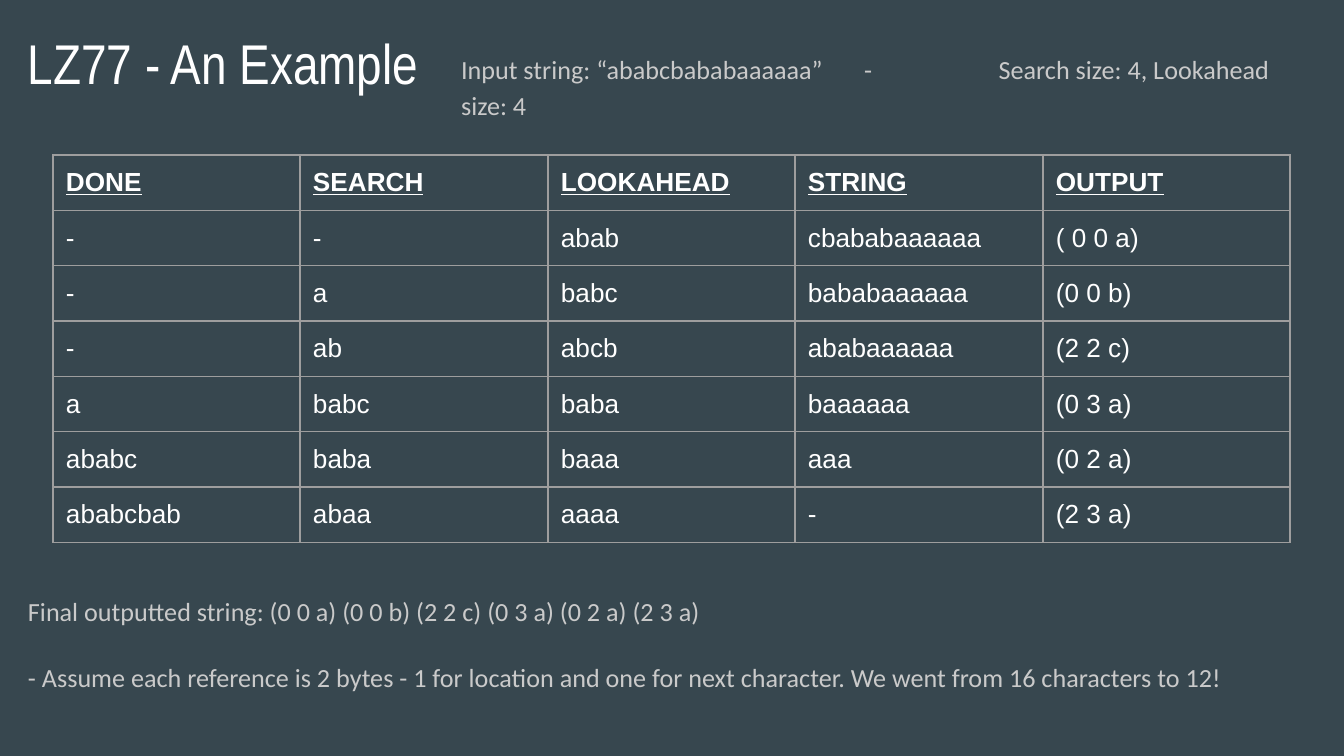
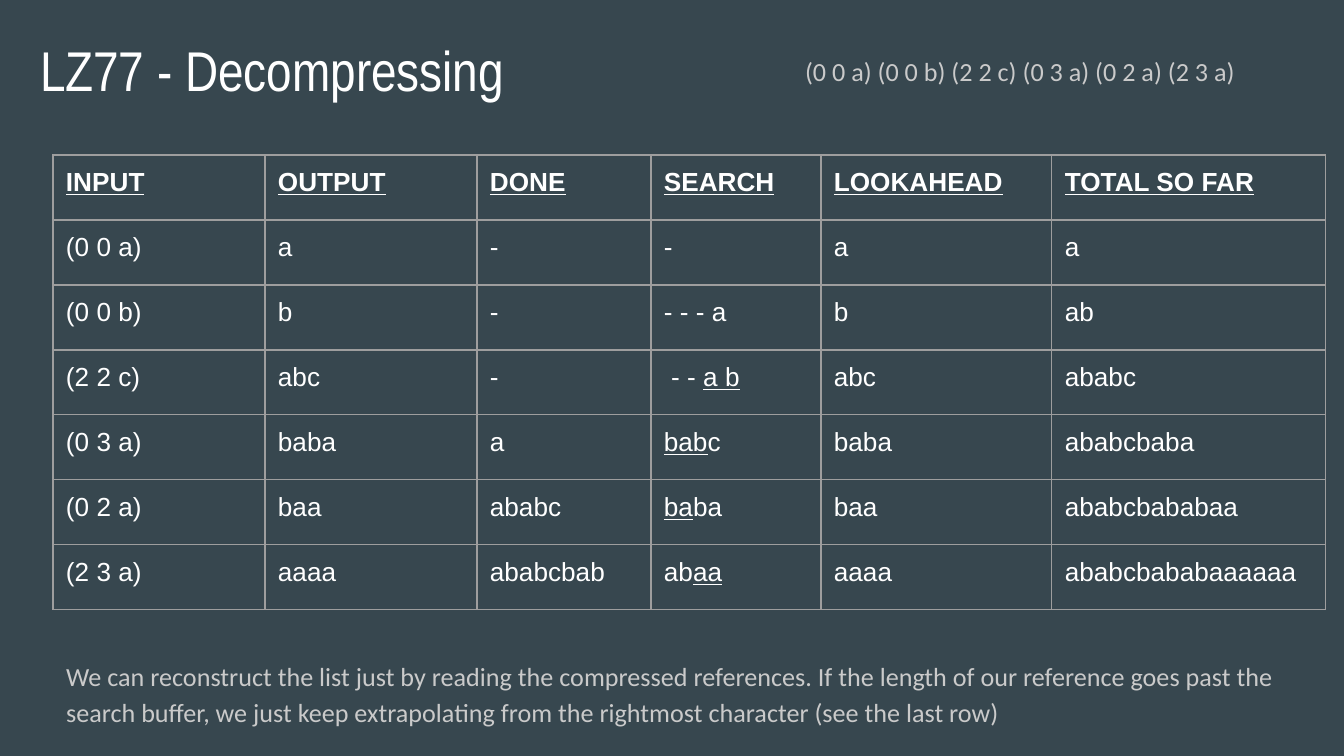
"""Build two slides on LZ77 compression and decompression."""
from dataclasses import dataclass
from typing import NamedTuple

from lxml import etree
from pptx import Presentation
from pptx.dml.color import RGBColor
from pptx.enum import text
from pptx.oxml import ns
from pptx.util import Pt

PX_PER_INCH = 134.4
EMU_PER_PX = 914400 / PX_PER_INCH
TWO_CONTENT_LAYOUT = 3
REFERENCES = ("(0 0 a)", "(0 0 b)", "(2 2 c)", "(0 3 a)", "(0 2 a)", "(2 3 a)")
ENCODED = " ".join(REFERENCES)


class Style(NamedTuple):
    """Font, size and colour of a kind of text."""

    font: str
    size: int
    color: str


@dataclass(frozen=True)
class Theme:
    """Colours, type styles and spacing shared by the slides."""

    background: str = "37474F"
    border: str = "9E9E9E"
    border_width: float = 0.75
    title: Style = Style("Arial Narrow", 30, "FFFFFF")
    body: Style = Style("Calibri", 14, "CACACA")
    cell: Style = Style("Arial", 14, "FFFFFF")
    body_line_spacing: float = 1.15
    body_space_after: int = 16
    inset: int = 13


class Box(NamedTuple):
    """Place and size in px."""

    left: int
    top: int
    width: int
    height: int


class Run(NamedTuple):
    """A stretch of text with its emphasis."""

    words: str
    underline: bool = False
    bold: bool = False


class TextBlock(NamedTuple):
    """Paragraphs inside a placeholder."""

    box: Box
    paragraphs: tuple[str, ...]


Cell = str | tuple[Run, ...]


@dataclass(frozen=True)
class Grid:
    """Contents and measures of a trace table."""

    headings: tuple[str, ...]
    rows: tuple[tuple[Cell, ...], ...]
    column_widths: tuple[int, ...]
    row_height: int
    left: int = 53
    top: int = 155


@dataclass(frozen=True)
class TraceSlide:
    """A title, a table and the texts above and below it."""

    title: TextBlock
    summary: TextBlock
    grid: Grid
    note: TextBlock


THEME = Theme()

COMPRESSING = TraceSlide(
    title=TextBlock(Box(15, 16, 585, 85), ("LZ77 - An Example",)),
    summary=TextBlock(
        Box(448, 36, 868, 79),
        ("Input string: “ababcbababaaaaaa”\t-\tSearch size: 4, Lookahead size: 4",),
    ),
    grid=Grid(
        headings=("DONE", "SEARCH", "LOOKAHEAD", "STRING", "OUTPUT"),
        rows=(
            ("-", "-", "abab", "cbababaaaaaa", "( 0 0 a)"),
            ("-", "a", "babc", "bababaaaaaa", "(0 0 b)"),
            ("-", "ab", "abcb", "ababaaaaaa", "(2 2 c)"),
            ("a", "babc", "baba", "baaaaaa", "(0 3 a)"),
            ("ababc", "baba", "baaa", "aaa", "(0 2 a)"),
            ("ababcbab", "abaa", "aaaa", "-", "(2 3 a)"),
        ),
        column_widths=(247, 248, 247, 248, 247),
        row_height=35,
    ),
    note=TextBlock(
        Box(15, 578, 1261, 164),
        (
            f"Final outputted string: {ENCODED}",
            "- Assume each reference is 2 bytes - 1 for location and one for next "
            "character. We went from 16 characters to 12!",
        ),
    ),
)

DECOMPRESSING = TraceSlide(
    title=TextBlock(Box(27, 22, 523, 101), ("LZ77 - Decompressing",)),
    summary=TextBlock(Box(792, 38, 511, 67), (ENCODED,)),
    grid=Grid(
        headings=("INPUT", "OUTPUT", "DONE", "SEARCH", "LOOKAHEAD", "TOTAL SO FAR"),
        rows=tuple(
            (reference, *steps)
            for reference, steps in zip(
                REFERENCES,
                (
                    ("a", "-", "-", "a", "a"),
                    ("b", "-", "- - - a", "b", "ab"),
                    ("abc", "-", (Run(" - - "), Run("a b", True)), "abc", "ababc"),
                    ("baba", "a", (Run("bab", True), Run("c")), "baba", "ababcbaba"),
                    ("baa", "ababc", (Run("ba", True), Run("ba")), "baa", "ababcbababaa"),
                    ("aaaa", "ababcbab", (Run("ab"), Run("aa", True)), "aaaa", "ababcbababaaaaaa"),
                ),
            )
        ),
        column_widths=(212, 212, 174, 170, 231, 274),
        row_height=65,
    ),
    note=TextBlock(
        Box(53, 643, 1249, 89),
        (
            "We can reconstruct the list just by reading the compressed references. "
            "If the length of our reference goes past the search buffer, we just keep "
            "extrapolating from the rightmost character (see the last row)",
        ),
    ),
)


def px(length: int) -> int:
    """Turn px into EMU."""
    return round(length * EMU_PER_PX)


def add_run(paragraph, run: Run, style: Style) -> None:
    """Append a styled run to a paragraph."""
    added = paragraph.add_run()
    added.text = run.words
    font = added.font
    font.name = style.font
    font.size = Pt(style.size)
    font.color.rgb = RGBColor.from_string(style.color)
    font.bold = run.bold
    font.underline = run.underline


def set_insets(target) -> None:
    """Give a text frame or cell equal margins."""
    for side in ("left", "top", "right", "bottom"):
        setattr(target, f"margin_{side}", px(THEME.inset))


def clear_list_format(paragraph) -> None:
    """Remove bullet and indent and set one-inch tab stops."""
    properties = paragraph._p.get_or_add_pPr()
    for name, value in (("marL", "0"), ("indent", "0"), ("defTabSz", "914400")):
        properties.set(name, value)
    etree.SubElement(properties, ns.qn("a:buNone"))


def fill_placeholder(
    shape, block: TextBlock, style: Style, line_spacing: float = 1.0, space_after: int = 0
) -> None:
    """Move a placeholder and write its paragraphs."""
    shape.left, shape.top, shape.width, shape.height = map(px, block.box)
    frame = shape.text_frame
    frame.word_wrap = True
    frame.auto_size = text.MSO_AUTO_SIZE.NONE
    frame.vertical_anchor = text.MSO_ANCHOR.TOP
    set_insets(frame)
    for index, words in enumerate(block.paragraphs):
        paragraph = frame.add_paragraph() if index else frame.paragraphs[0]
        paragraph.alignment = text.PP_ALIGN.LEFT
        paragraph.line_spacing = line_spacing
        paragraph.space_before = Pt(0)
        paragraph.space_after = Pt(space_after)
        clear_list_format(paragraph)
        add_run(paragraph, Run(words), style)


def fill_body(shape, block: TextBlock) -> None:
    """Write a body placeholder in the shared body style."""
    fill_placeholder(shape, block, THEME.body, THEME.body_line_spacing, THEME.body_space_after)


def set_borders(cell) -> None:
    """Draw the shared thin border on each side of a cell."""
    properties = cell._tc.get_or_add_tcPr()
    for side in ("lnL", "lnR", "lnT", "lnB"):
        line = etree.SubElement(
            properties, ns.qn(f"a:{side}"), w=str(Pt(THEME.border_width))
        )
        fill = etree.SubElement(line, ns.qn("a:solidFill"))
        etree.SubElement(fill, ns.qn("a:srgbClr"), val=THEME.border)


def fill_cell(cell, runs: tuple[Run, ...]) -> None:
    """Format a table cell and write its runs."""
    set_insets(cell)
    set_borders(cell)
    cell.fill.background()
    for run in runs:
        add_run(cell.text_frame.paragraphs[0], run, THEME.cell)


def add_grid(slide, grid: Grid):
    """Add a trace table and return its frame."""
    row_count = len(grid.rows) + 1
    box = Box(grid.left, grid.top, sum(grid.column_widths), row_count * grid.row_height)
    frame = slide.shapes.add_table(row_count, len(grid.headings), *map(px, box))
    table = frame.table
    table.first_row = table.horz_banding = False
    for column, width in zip(table.columns, grid.column_widths):
        column.width = px(width)
    for row in table.rows:
        row.height = px(grid.row_height)
    headings = tuple((Run(heading, True, True),) for heading in grid.headings)
    for row, contents in zip(table.rows, (headings, *grid.rows)):
        for cell, content in zip(row.cells, contents):
            fill_cell(cell, (Run(content),) if isinstance(content, str) else content)
    return frame


def add_trace_slide(presentation, trace: TraceSlide) -> None:
    """Add a slide with its title, texts and table."""
    slide = presentation.slides.add_slide(presentation.slide_layouts[TWO_CONTENT_LAYOUT])
    title, summary, note = slide.placeholders
    fill_placeholder(title, trace.title, THEME.title)
    fill_body(summary, trace.summary)
    fill_body(note, trace.note)
    frame = add_grid(slide, trace.grid)
    frame.element.addnext(note.element)


def main() -> None:
    """Build and save the presentation."""
    presentation = Presentation()
    presentation.slide_width, presentation.slide_height = px(1344), px(756)
    background = presentation.slide_master.background.fill
    background.solid()
    background.fore_color.rgb = RGBColor.from_string(THEME.background)
    for trace in (COMPRESSING, DECOMPRESSING):
        add_trace_slide(presentation, trace)
    presentation.save("out.pptx")


if __name__ == "__main__":
    main()
